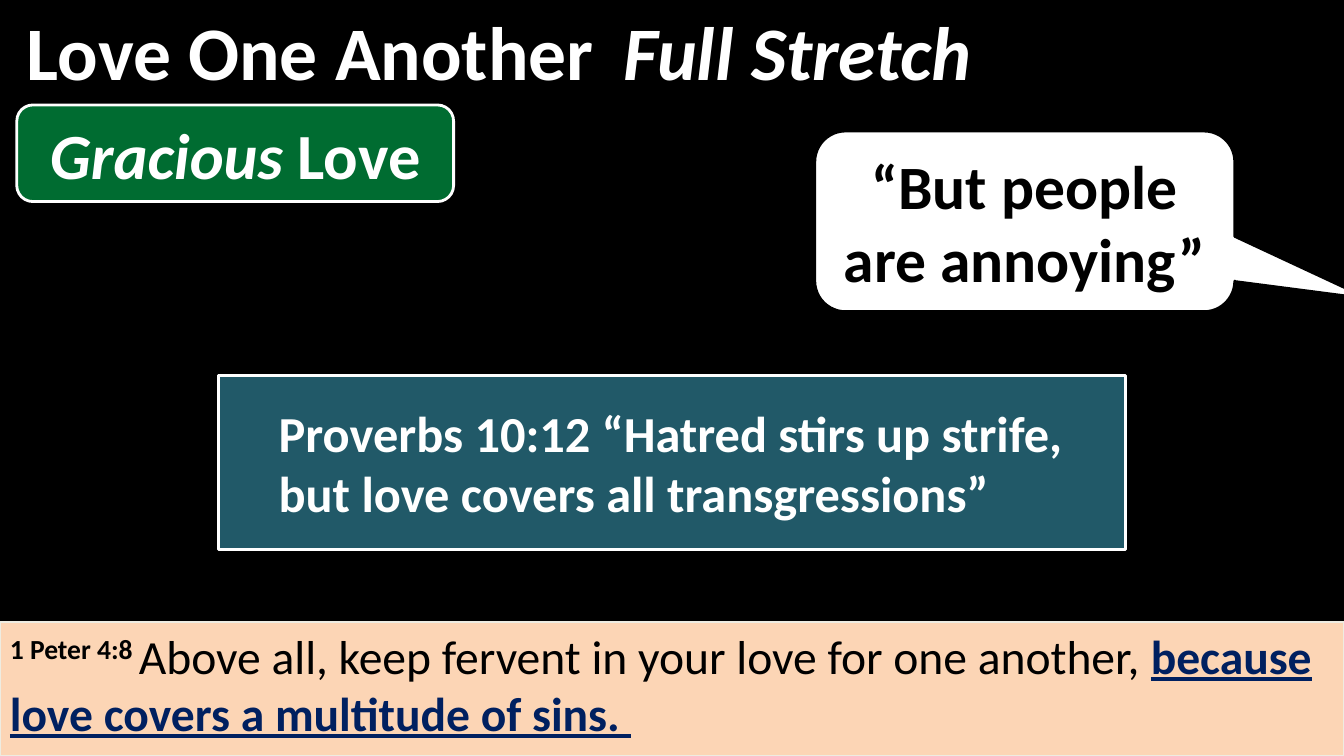
from dataclasses import dataclass

from pptx import Presentation
from pptx.dml.color import RGBColor
from pptx.enum.shapes import MSO_SHAPE
from pptx.enum.text import MSO_ANCHOR, MSO_AUTO_SIZE, PP_ALIGN
from pptx.util import Pt

RECT = MSO_SHAPE.RECTANGLE
ROUNDED = MSO_SHAPE.ROUNDED_RECTANGLE
CALLOUT = MSO_SHAPE.ROUNDED_RECTANGULAR_CALLOUT
TOP, MIDDLE = MSO_ANCHOR.TOP, MSO_ANCHOR.MIDDLE
LEFT, CENTER = PP_ALIGN.LEFT, PP_ALIGN.CENTER
NO_AUTOFIT = MSO_AUTO_SIZE.NONE

BLACK = RGBColor(0x00, 0x00, 0x00)
WHITE = RGBColor(0xFF, 0xFF, 0xFF)
PEACH = RGBColor(0xFC, 0xD5, 0xB5)
CREAM = RGBColor(0xEE, 0xEC, 0xE1)
NAVY = RGBColor(0x00, 0x20, 0x60)
TEAL = RGBColor(0x21, 0x59, 0x68)
GREEN = RGBColor(0x00, 0x6C, 0x31)

FONT = "Calibri"
SLIDE_W, SLIDE_H = 960, 540
HEADING_H, HEADING_SIZE = 72, 54


@dataclass
class Span:
    text: str
    color: RGBColor = WHITE
    bold: bool = True
    italic: bool = False
    underline: bool = False
    raised: bool = False


@dataclass
class Panel:
    kind: int
    box: tuple[float, float, float, float]
    fill: RGBColor
    line: RGBColor
    size: float
    spans: list[Span]
    line_width: float = 2
    align: int = LEFT
    anchor: int = MIDDLE
    indent: float = 0
    adjustments: tuple[float, ...] = ()


def place(sp, box: tuple[float, float, float, float]) -> None:
    sp.left, sp.top, sp.width, sp.height = (Pt(v) for v in box)


def write(sp, spans: list[Span], size: float, align: int = LEFT,
          anchor: int = MIDDLE, indent: float = 0) -> None:
    tf = sp.text_frame
    tf.word_wrap = True
    tf.auto_size = NO_AUTOFIT
    tf.vertical_anchor = anchor
    p = tf.paragraphs[0]
    p.alignment = align
    if indent:
        p.level = 1
        p._p.get_or_add_pPr().set("marL", str(Pt(indent)))
    for span in spans:
        r = p.add_run()
        r.text = span.text
        r.font.name = FONT
        r.font.size = Pt(size)
        r.font.color.rgb = span.color
        r.font.bold = span.bold
        r.font.italic = span.italic
        r.font.underline = span.underline
        if span.raised:
            r._r.get_or_add_rPr().set("baseline", "30000")


def draw_panel(slide, panel: Panel) -> None:
    sp = slide.shapes.add_shape(panel.kind, *(Pt(v) for v in panel.box))
    sp.shadow.inherit = False
    for i, value in enumerate(panel.adjustments):
        sp.adjustments[i] = value
    sp.fill.solid()
    sp.fill.fore_color.rgb = panel.fill
    sp.line.color.rgb = panel.line
    sp.line.width = Pt(panel.line_width)
    write(sp, panel.spans, panel.size, panel.align, panel.anchor, panel.indent)


PANELS = [
    # Verse along the bottom
    Panel(RECT, (0, 444, SLIDE_W, 96), PEACH, CREAM, 34, [
        Span("1 Peter 4:8 ", BLACK, raised=True),
        Span("Above all, keep fervent in your love for one another, ",
             BLACK, bold=False),
        Span("because love covers a multitude of sins. ", NAVY, underline=True),
    ], line_width=1.5, anchor=TOP),
    # Proverb in the middle
    Panel(RECT, (156, 268, 648, 124.5), TEAL, WHITE, 36, [
        Span("Proverbs 10:12 “Hatred stirs up strife, "
             "but love covers all transgressions”"),
    ], indent=36),
    # Objection in a speech bubble
    Panel(CALLOUT, (582, 93.6, 300, 129), WHITE, BLACK, 44, [
        Span("“But people are annoying”", BLACK),
    ], align=CENTER, adjustments=(0.82, 0.43, 0.17)),
    # Topic label
    Panel(ROUNDED, (12, 75, 312, 69), GREEN, WHITE, 46, [
        Span("Gracious ", italic=True),
        Span("Love"),
    ], align=CENTER),
]


def main() -> None:
    prs = Presentation()
    prs.slide_width, prs.slide_height = Pt(SLIDE_W), Pt(SLIDE_H)
    slide = prs.slides.add_slide(prs.slide_layouts[5])
    slide.background.fill.solid()
    slide.background.fill.fore_color.rgb = BLACK

    # Heading in two parts
    title = slide.shapes.title
    place(title, (12, 0, 426, HEADING_H))
    title.fill.solid()
    title.fill.fore_color.rgb = BLACK
    write(title, [Span("Love One Another")], HEADING_SIZE)
    subtitle = slide.shapes.add_textbox(Pt(438), 0, Pt(684), Pt(HEADING_H))
    write(subtitle, [Span("Full Stretch", italic=True)], HEADING_SIZE)

    for panel in PANELS:
        draw_panel(slide, panel)
    prs.save("out.pptx")


if __name__ == "__main__":
    main()
